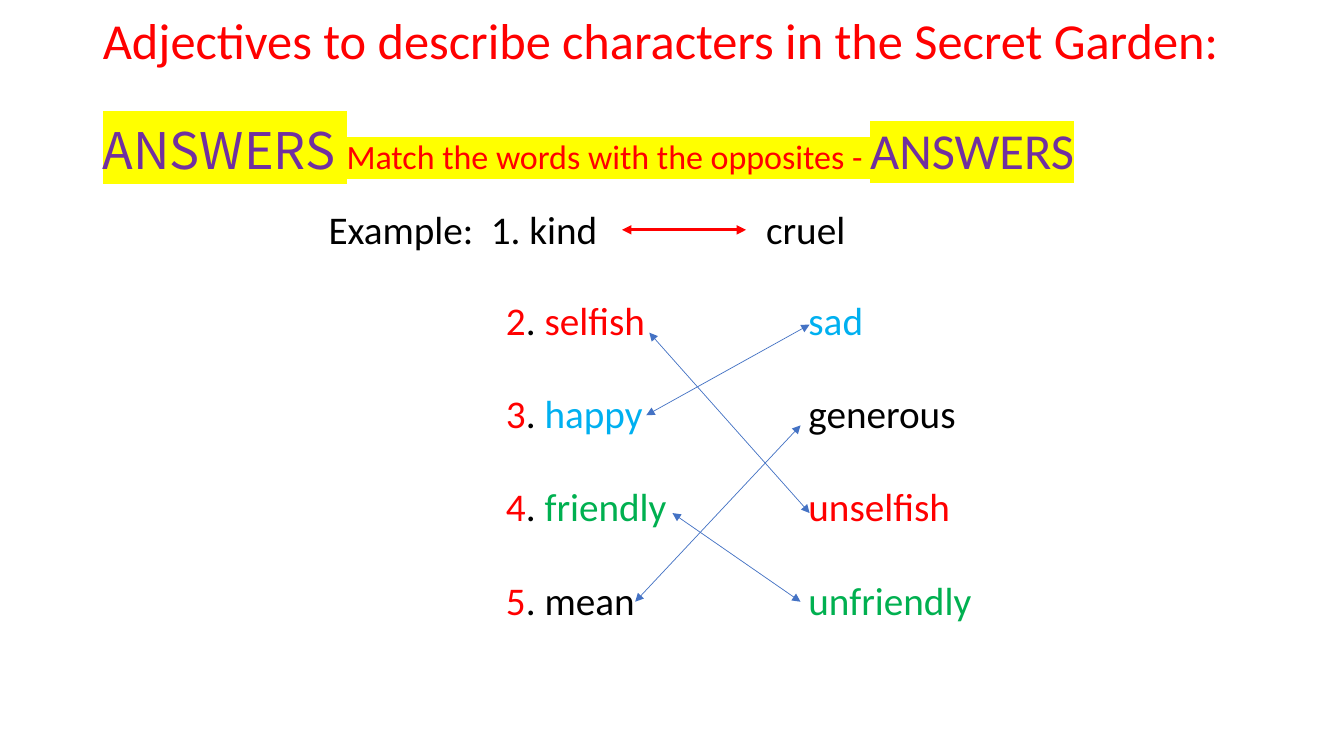
"""Build a slide that matches adjectives with their opposites."""
import pptx
import pptx.dml.color
import pptx.enum.shapes
import pptx.enum.text
import pptx.oxml.ns
import pptx.util
from lxml import etree
from pptx.util import Inches, Pt

RED = pptx.dml.color.RGBColor(0xFF, 0x00, 0x00)
PURPLE = pptx.dml.color.RGBColor(0x70, 0x30, 0xA0)
BLACK = pptx.dml.color.RGBColor(0x00, 0x00, 0x00)
SKY = pptx.dml.color.RGBColor(0x00, 0xB0, 0xF0)
GREEN = pptx.dml.color.RGBColor(0x00, 0xB0, 0x50)
BLUE = pptx.dml.color.RGBColor(0x44, 0x72, 0xC4)
YELLOW = pptx.dml.color.RGBColor(0xFF, 0xFF, 0x00)

FONT = "Calibri"
WIDE_FONT = "Noto Sans CJK SC"

PAIRS = [
    ("selfish", RED, "sad", SKY),
    ("happy", SKY, "generous", BLACK),
    ("friendly", GREEN, "unselfish", RED),
    ("mean", BLACK, "unfriendly", GREEN),
]
MATCHES = [
    (6.44, 3.3, 8.03, 5.09),
    (6.67, 5.09, 7.94, 5.97),
    (6.3, 5.97, 7.94, 4.22),
    (6.41, 4.12, 8.03, 3.22),
]


def add_run(p, text, color, size=28, font=FONT, highlight=None):
    """Append a formatted run to a paragraph."""
    r = p.add_run()
    r.text = text
    r.font.size = Pt(size)
    r.font.color.rgb = color
    if highlight is not None:
        mark = etree.SubElement(r.font._element, pptx.oxml.ns.qn("a:highlight"))
        etree.SubElement(mark, pptx.oxml.ns.qn("a:srgbClr"), val=str(highlight))
    r.font.name = font


def add_tabs(p, *stops):
    """Give a paragraph left tab stops, in inches from the text edge."""
    tabs = etree.SubElement(p._p.get_or_add_pPr(), pptx.oxml.ns.qn("a:tabLst"))
    for stop in stops:
        etree.SubElement(tabs, pptx.oxml.ns.qn("a:tab"), pos=str(Inches(stop)), algn="l")


def add_arrow(s, x1, y1, x2, y2, color, width):
    """Draw a straight line with an arrowhead at each end."""
    line = s.shapes.add_connector(
        pptx.enum.shapes.MSO_CONNECTOR.STRAIGHT,
        Inches(x1), Inches(y1), Inches(x2), Inches(y2))
    line.line.color.rgb = color
    line.line.width = Pt(width)
    for end in ("headEnd", "tailEnd"):
        etree.SubElement(line.line._get_or_add_ln(), pptx.oxml.ns.qn(f"a:{end}"), type="triangle")
    etree.SubElement(line._element.spPr, pptx.oxml.ns.qn("a:effectLst"))


def fill_title(s):
    """Place the title and its highlighted instruction line."""
    sp = s.shapes.title
    sp.left, sp.top, sp.width, sp.height = Inches(0.92), Inches(0.4), Inches(12.01), Inches(1.7)
    tf = sp.text_frame
    tf.word_wrap = True
    tf.auto_size = pptx.enum.text.MSO_AUTO_SIZE.NONE
    tf.vertical_anchor = pptx.enum.text.MSO_ANCHOR.MIDDLE
    tf.margin_bottom = Inches(0.6)
    heading, task = tf.paragraphs[0], tf.add_paragraph()
    for p in (heading, task):
        p.alignment = pptx.enum.text.PP_ALIGN.LEFT
        p.line_spacing = 0.9
        p.space_before = Pt(0)
    task.space_before = Pt(39.5)
    add_run(heading, "Adjectives to describe characters in the Secret Garden:", RED, 36)
    add_run(task, "ANSWERS ", PURPLE, 36, WIDE_FONT, YELLOW)
    add_run(task, "Match the words with the opposites - ", RED, 24.3, highlight=YELLOW)
    add_run(task, "ANSWERS", PURPLE, 36, highlight=YELLOW)


def add_word_list(s):
    """Write the example and the numbered words beside the opposites."""
    sp = s.shapes.add_textbox(Inches(0.92), Inches(1.99), Inches(11.5), Inches(4.65))
    tf = sp.text_frame
    tf.word_wrap = True
    p = tf.paragraphs[0]
    add_tabs(p, 2.24, 3.85, 6.58)
    add_run(p, "\tExample:\t1. kind\tcruel", BLACK)
    for number, (word, color, opposite, opposite_color) in enumerate(PAIRS, 2):
        p = tf.add_paragraph()
        add_tabs(p, 4, 7)
        p.space_before = Pt(31 if number == 2 else 33)
        add_run(p, f"\t{number}", RED)
        add_run(p, ". ", BLACK)
        add_run(p, word, color)
        add_run(p, f"\t{opposite}", opposite_color)


def main():
    """Build and save the slide."""
    prs = pptx.Presentation()
    prs.slide_width, prs.slide_height = Inches(13.33), Inches(7.5)
    s = prs.slides.add_slide(prs.slide_layouts[5])
    fill_title(s)
    add_word_list(s)
    add_arrow(s, 6.17, 2.28, 7.4, 2.28, RED, 2.25)
    for match in MATCHES:
        add_arrow(s, *match, BLUE, 0.5)
    prs.save("out.pptx")


if __name__ == "__main__":
    main()
